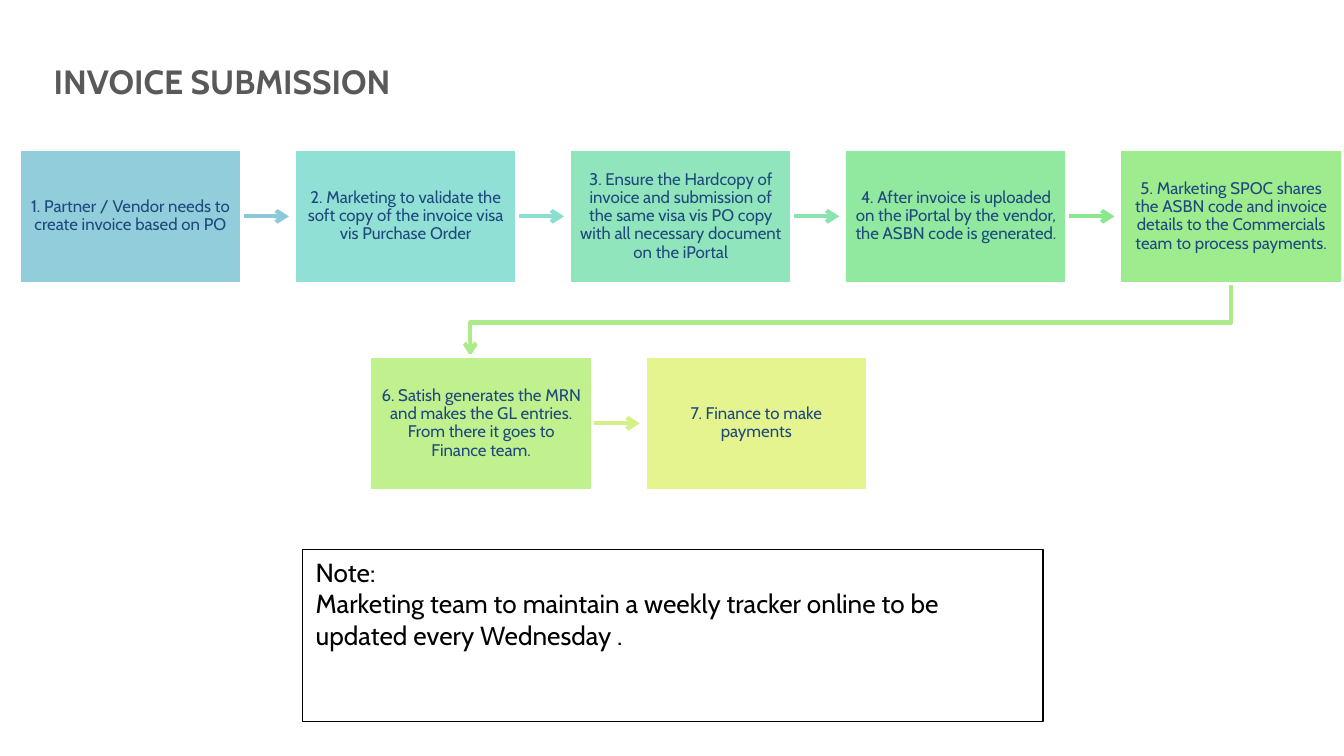
from typing import NamedTuple

from lxml import etree
from pptx import Presentation
from pptx import util as u
from pptx.dml import color
from pptx.enum import shapes, text
from pptx.oxml import ns

FONT = "Cabin"
SLIDE_W = 10
SLIDE_H = SLIDE_W * 9 / 16
BOX_W, BOX_H = 1.66, 1.0
ROW_1, ROW_2 = 1.11, 2.65
PITCH = (8.33 - 0.14) / 4
ARROW_LEN = 0.35


class Step(NamedTuple):
    left: float
    top: float
    fill: str
    label: str
    arrow: str = ""


TOP_STEPS = [
    ("92CDDC", "1. Partner / Vendor needs to create invoice based on PO", "8DCAD9"),
    ("91E0D5", "2. Marketing to validate the soft copy of the invoice visa vis Purchase Order", "8CDECF"),
    ("90E5BC", "3. Ensure the Hardcopy of invoice and submission of the same visa vis PO copy "
               "with all necessary document on the iPortal", "8BE3B0"),
    ("90E99F", "4. After invoice is uploaded on the iPortal by the vendor, the ASBN code is generated.", "8AE78D"),
    ("9FEC8F", "5. Marketing SPOC shares the ASBN code and invoice details to the Commercials "
               "team to process payments."),
]
BOTTOM_STEPS = [
    ("C1F08F", "6. Satish generates the MRN and makes the GL entries. From there it goes to Finance team.", "D6F089"),
    ("E5F48F", "7. Finance to make payments"),
]


def rgb(value: str) -> color.RGBColor:
    return color.RGBColor.from_string(value)


def row(left: float, top: float, items: list) -> list[Step]:
    return [Step(left + i * PITCH, top, *item) for i, item in enumerate(items)]


def style_font(p, size: float, hex_color: str, bold: bool = False) -> None:
    p.font.name, p.font.size, p.font.bold = FONT, u.Pt(size), bold
    p.font.color.rgb = rgb(hex_color)


def style_line(sp, hex_color: str, width: float, arrow: bool = False) -> None:
    sp.line.color.rgb = rgb(hex_color)
    sp.line.width = u.Pt(width)
    if arrow:
        ln = sp.line._get_or_add_ln()
        etree.SubElement(ln, ns.qn("a:tailEnd"), type="arrow")


def add_arrow(s, step: Step) -> None:
    x, y = step.left + BOX_W, step.top + BOX_H / 2
    sp = s.shapes.add_connector(
        shapes.MSO_CONNECTOR.STRAIGHT,
        u.Inches(x), u.Inches(y), u.Inches(x + ARROW_LEN), u.Inches(y))
    style_line(sp, step.arrow, 2.25, arrow=True)
    etree.SubElement(sp._element.spPr, ns.qn("a:effectLst"))


def add_return_arrow(s, start: Step, end: Step, bend: float, hex_color: str) -> None:
    x1, x2 = start.left + BOX_W / 2, end.left + 0.75
    points = [(x1, start.top + BOX_H), (x1, bend), (x2, bend), (x2, end.top)]
    first, *rest = [(u.Inches(x), u.Inches(y)) for x, y in points]
    builder = s.shapes.build_freeform(*first)
    builder.add_line_segments(rest, close=False)
    sp = builder.convert_to_shape()
    sp.shadow.inherit = False
    sp.fill.background()
    style_line(sp, hex_color, 2.25, arrow=True)


def add_rect(s, left: float, top: float, width: float, height: float):
    sp = s.shapes.add_shape(
        shapes.MSO_SHAPE.RECTANGLE,
        u.Inches(left), u.Inches(top), u.Inches(width), u.Inches(height))
    sp.shadow.inherit = False
    sp.text_frame.word_wrap = True
    return sp


def add_step(s, step: Step) -> None:
    sp = add_rect(s, step.left, step.top, BOX_W, BOX_H)
    sp.fill.solid()
    sp.fill.fore_color.rgb = rgb(step.fill)
    style_line(sp, "FFFFFF", 2)
    tf = sp.text_frame
    tf.vertical_anchor = text.MSO_ANCHOR.MIDDLE
    tf.margin_left = tf.margin_right = u.Inches(0.08)
    tf.margin_top = tf.margin_bottom = u.Inches(0.09)
    p = tf.paragraphs[0]
    p.text = step.label
    p.alignment = text.PP_ALIGN.CENTER
    p.line_spacing = 0.9
    style_font(p, 9, "1F497D")


def add_title(s, title: str) -> None:
    sp = s.shapes.add_textbox(u.Inches(0.4), u.Inches(0.4), u.Inches(8.24), u.Inches(0.4))
    tf = sp.text_frame
    tf.word_wrap = True
    tf.margin_left = 0
    tf.vertical_anchor = text.MSO_ANCHOR.MIDDLE
    p = tf.paragraphs[0]
    p.text = title
    style_font(p, 18, "595959", bold=True)


def add_note(s, lines: list[str]) -> None:
    sp = add_rect(s, 2.25, 4.09, 5.51, 1.28)
    sp.fill.background()
    style_line(sp, "000000", 0.75)
    tf = sp.text_frame
    tf.vertical_anchor = text.MSO_ANCHOR.TOP
    tf.text = "\n".join(lines)
    for p in tf.paragraphs:
        p.alignment = text.PP_ALIGN.LEFT
        style_font(p, 14, "000000")


def main() -> None:
    prs = Presentation()
    prs.slide_width, prs.slide_height = u.Inches(SLIDE_W), u.Inches(SLIDE_H)
    s = prs.slides.add_slide(prs.slide_layouts[6])

    add_title(s, "INVOICE SUBMISSION")
    top_row = row(0.14, ROW_1, TOP_STEPS)
    bottom_row = row(2.75, ROW_2, BOTTOM_STEPS)
    add_return_arrow(s, top_row[-1], bottom_row[0], 2.4, "ADEB8A")
    for step in top_row + bottom_row:
        if step.arrow:
            add_arrow(s, step)
        add_step(s, step)
    add_note(s, [
        "Note:",
        "Marketing team to maintain a weekly tracker online to be updated every Wednesday .",
    ])
    prs.save("out.pptx")


if __name__ == "__main__":
    main()
